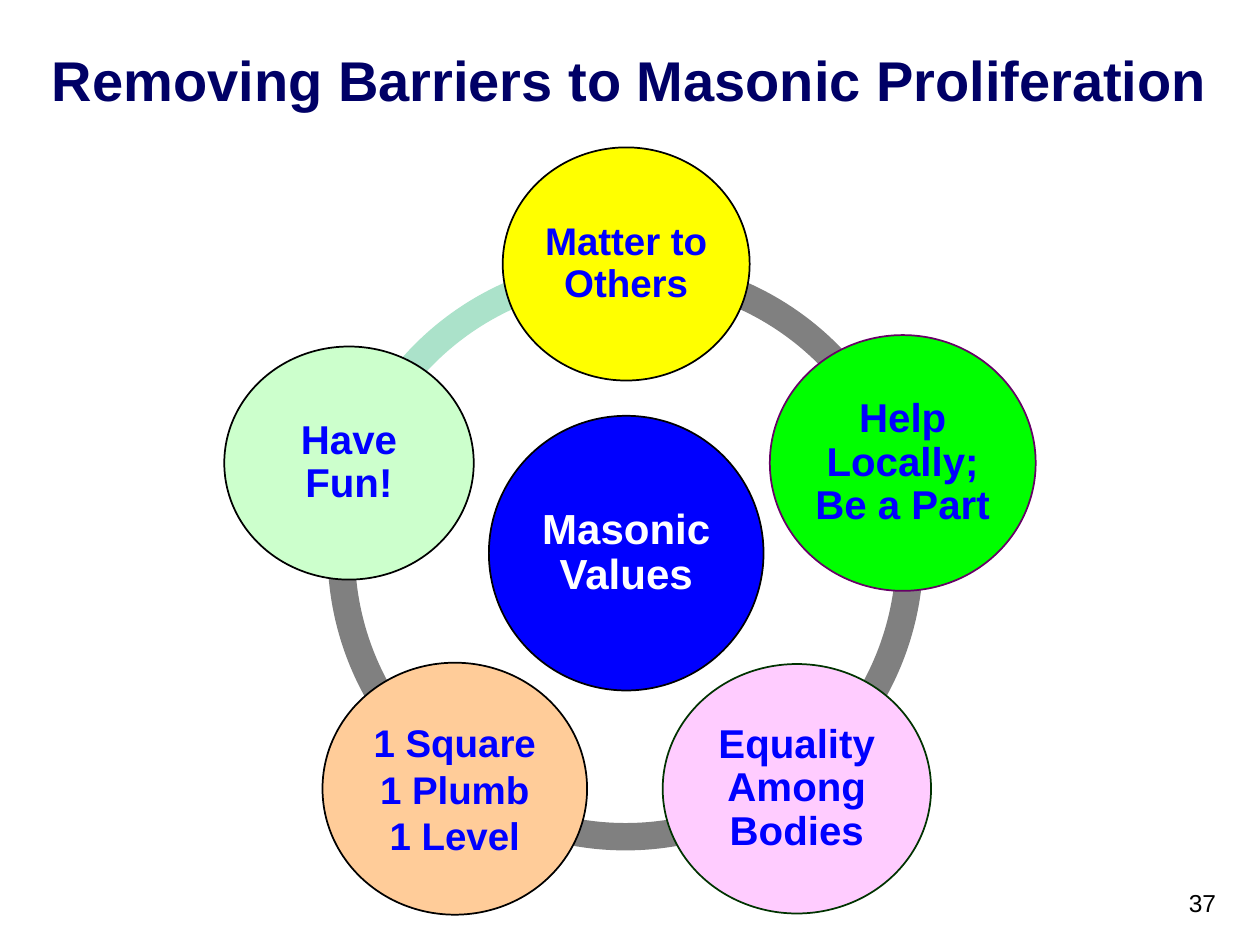
from pptx import Presentation
from pptx.dml.color import RGBColor
from pptx.enum.shapes import MSO_SHAPE as Preset
from pptx.enum.text import MSO_ANCHOR as Anchor, PP_ALIGN as Align
from pptx.util import Inches, Pt

RING_SIZE = 4.73
RING_THICKNESS = 0.046
ADJUSTMENT_PER_DEGREE = 0.6
GREY = "808080"
BLUE = "0000FF"

# left, top, start degree, end degree, colour
RING_ARCS = [
    (2.6, 2.04, 198, 270, "ABE2CA"),
    (2.6, 2.02, 126, 198, GREY),
    (2.6, 2.02, 54, 126, GREY),
    (2.6, 2.02, 342, 54, GREY),
    (2.61, 2.04, 270, 342, GREY),
]

# lines, left, top, width, height, fill, outline, text size, text colour, line spacing
CIRCLES = [
    (["Masonic Values"], 3.88, 3.3, 2.18, 2.18, BLUE, "000000", 24, "FFFFFF", 0.9),
    (["Matter to Others"], 3.99, 1.17, 1.96, 1.85, "FFFF00", "000000", 22, BLUE, 0.9),
    (["Help Locally; Be a Part"], 6.11, 2.66, 2.11, 2.03, "00FF00", "660066", 23, BLUE, 0.9),
    (["Equality Among Bodies"], 5.26, 5.27, 2.13, 1.98, "FFCCFF", "003300", 23, BLUE, 0.9),
    (["1 Square", "1 Plumb", "1 Level"], 2.56, 5.26, 2.1, 2, "FFCC99", "000000", 22, BLUE, 1.0),
    (["Have Fun!"], 1.78, 2.75, 1.98, 1.85, "CCFFCC", "000000", 23, BLUE, 0.9),
]


def color(hex_string):
    return RGBColor.from_string(hex_string)


def write_lines(frame, lines, size, text_color, bold=True, align=Align.CENTER,
                anchor=Anchor.MIDDLE, spacing=1.0):
    """Fill a text frame with one paragraph per line."""
    frame.word_wrap = True
    frame.vertical_anchor = anchor
    for index, line in enumerate(lines):
        paragraph = frame.add_paragraph() if index else frame.paragraphs[0]
        paragraph.text = line
        paragraph.alignment = align
        paragraph.line_spacing = spacing
        font = paragraph.font
        font.name, font.size, font.bold = "Arial", Pt(size), bold
        font.color.rgb = color(text_color)


def add_text(slide, line, left, top, width, height, size, text_color, **style):
    box = slide.shapes.add_textbox(Inches(left), Inches(top), Inches(width), Inches(height))
    write_lines(box.text_frame, [line], size, text_color, **style)


def add_filled_shape(slide, preset, left, top, width, height, fill):
    shape = slide.shapes.add_shape(
        preset, Inches(left), Inches(top), Inches(width), Inches(height))
    shape.shadow.inherit = False
    shape.fill.solid()
    shape.fill.fore_color.rgb = color(fill)
    return shape


def add_ring_arc(slide, left, top, start, end, fill):
    arc = add_filled_shape(slide, Preset.BLOCK_ARC, left, top, RING_SIZE, RING_SIZE, fill)
    arc.line.fill.background()
    arc.adjustments[0] = start * ADJUSTMENT_PER_DEGREE
    arc.adjustments[1] = end * ADJUSTMENT_PER_DEGREE
    arc.adjustments[2] = RING_THICKNESS


def add_circle(slide, lines, left, top, width, height, fill, outline, size, text_color, spacing):
    circle = add_filled_shape(slide, Preset.OVAL, left, top, width, height, fill)
    circle.line.color.rgb = color(outline)
    circle.line.width = Pt(1)
    frame = circle.text_frame
    frame.margin_left = frame.margin_right = Inches(0.03)
    frame.margin_top = frame.margin_bottom = Inches(0.03)
    write_lines(frame, lines, size, text_color, spacing=spacing)


def main():
    presentation = Presentation()
    presentation.slide_width = Inches(10)
    presentation.slide_height = Inches(7.5)
    slide = presentation.slides.add_slide(presentation.slide_layouts[6])

    add_text(slide, "Removing Barriers to Masonic Proliferation", 0, 0, 10, 1.25, 32, "000066")
    add_text(slide, "37", 7.67, 7, 2.08, 0.5, 14, "000000",
             bold=False, align=Align.RIGHT, anchor=Anchor.TOP)
    for arc in RING_ARCS:
        add_ring_arc(slide, *arc)
    for circle in CIRCLES:
        add_circle(slide, *circle)

    presentation.save("out.pptx")


if __name__ == "__main__":
    main()
